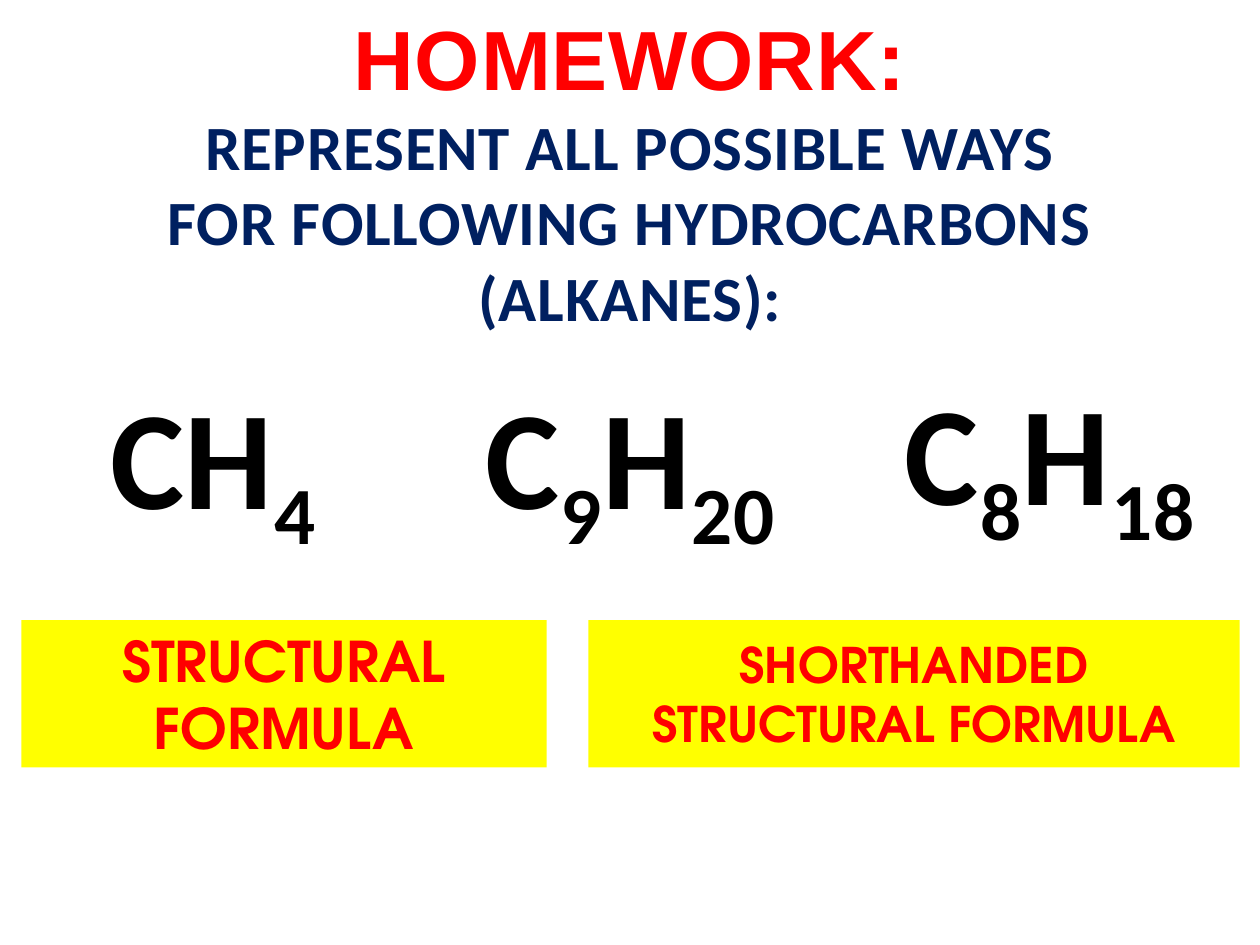
from pptx import Presentation
from pptx.dml.color import RGBColor
from pptx.enum.shapes import MSO_SHAPE
from pptx.enum.text import MSO_ANCHOR, MSO_AUTO_SIZE, PP_ALIGN
from pptx.util import Cm, Pt

RED, NAVY, BLACK, YELLOW = "FF0000", "002060", "000000", "FFFF00"

HEADING = [
    ("HOMEWORK:", dict(size=48, name="Arial", color=RED)),
    ("REPRESENT ALL POSSIBLE WAYS", dict(size=36, name="Calibri", color=NAVY)),
    ("FOR FOLLOWING HYDROCARBONS (ALKANES):", dict(size=36, name="Calibri", color=NAVY)),
]
# left, top, formula
FORMULAS = [
    (0.43, 7.32, "CH4"),
    (8.84, 7.32, "C9H20"),
    (17.3, 7.24, "C8H18"),
]
FORMULA_FONT = dict(size=80, name="Calibri", color=BLACK)
# left, width, text, size
LABELS = [
    (0.43, 10.59, "STRUCTURAL\nFORMULA", 32),
    (11.86, 13.13, "SHORTHANDED STRUCTURAL FORMULA", 28),
]


def rgb(value):
    return RGBColor.from_string(value)


def add_run(p, text, size, name, color, spacing=50, baseline=0):
    """Spacing is in hundredths of a point, baseline in thousandths of a percent."""
    r = p.add_run()
    r.text = text
    for key, value in dict(size=Pt(size), name=name, bold=True).items():
        setattr(r.font, key, value)
    r.font.color.rgb = rgb(color)
    for key, value in dict(spc=spacing, baseline=baseline).items():
        if value:
            r._r.get_or_add_rPr().set(key, str(value))


def set_frame(tf, anchor=MSO_ANCHOR.TOP):
    frame = dict(word_wrap=True, auto_size=MSO_AUTO_SIZE.NONE, vertical_anchor=anchor)
    for key, value in frame.items():
        setattr(tf, key, value)
    tf.paragraphs[0].alignment = PP_ALIGN.CENTER
    return tf.paragraphs[0]


prs = Presentation()
prs.slide_width, prs.slide_height = Cm(25.4), Cm(19.05)
s = prs.slides.add_slide(prs.slide_layouts[5])

title = s.shapes.title
title.left, title.top, title.width, title.height = 0, 0, prs.slide_width, Cm(6.93)
p = set_frame(title.text_frame)
for i, (text, font) in enumerate(HEADING):
    if i:
        p = title.text_frame.add_paragraph()
        p.alignment = PP_ALIGN.CENTER
    add_run(p, text, **font)

for left, top, formula in FORMULAS:
    box = s.shapes.add_textbox(Cm(left), Cm(top), Cm(7.72), Cm(3.68))
    p = set_frame(box.text_frame)
    for char in formula:
        add_run(p, char, **FORMULA_FONT, baseline=-25000 if char.isdigit() else 0)

for left, width, text, size in LABELS:
    sp = s.shapes.add_shape(MSO_SHAPE.RECTANGLE, Cm(left), Cm(12.5), Cm(width), Cm(2.97))
    sp.shadow.inherit = False
    sp.fill.solid()
    sp.fill.fore_color.rgb = rgb(YELLOW)
    sp.line.fill.background()
    p = set_frame(sp.text_frame, MSO_ANCHOR.MIDDLE)
    for i, line in enumerate(text.split("\n")):
        if i:
            p.add_line_break()
        add_run(p, line, size, "TeX Gyre Adventor", RED, spacing=0)

prs.save("out.pptx")
